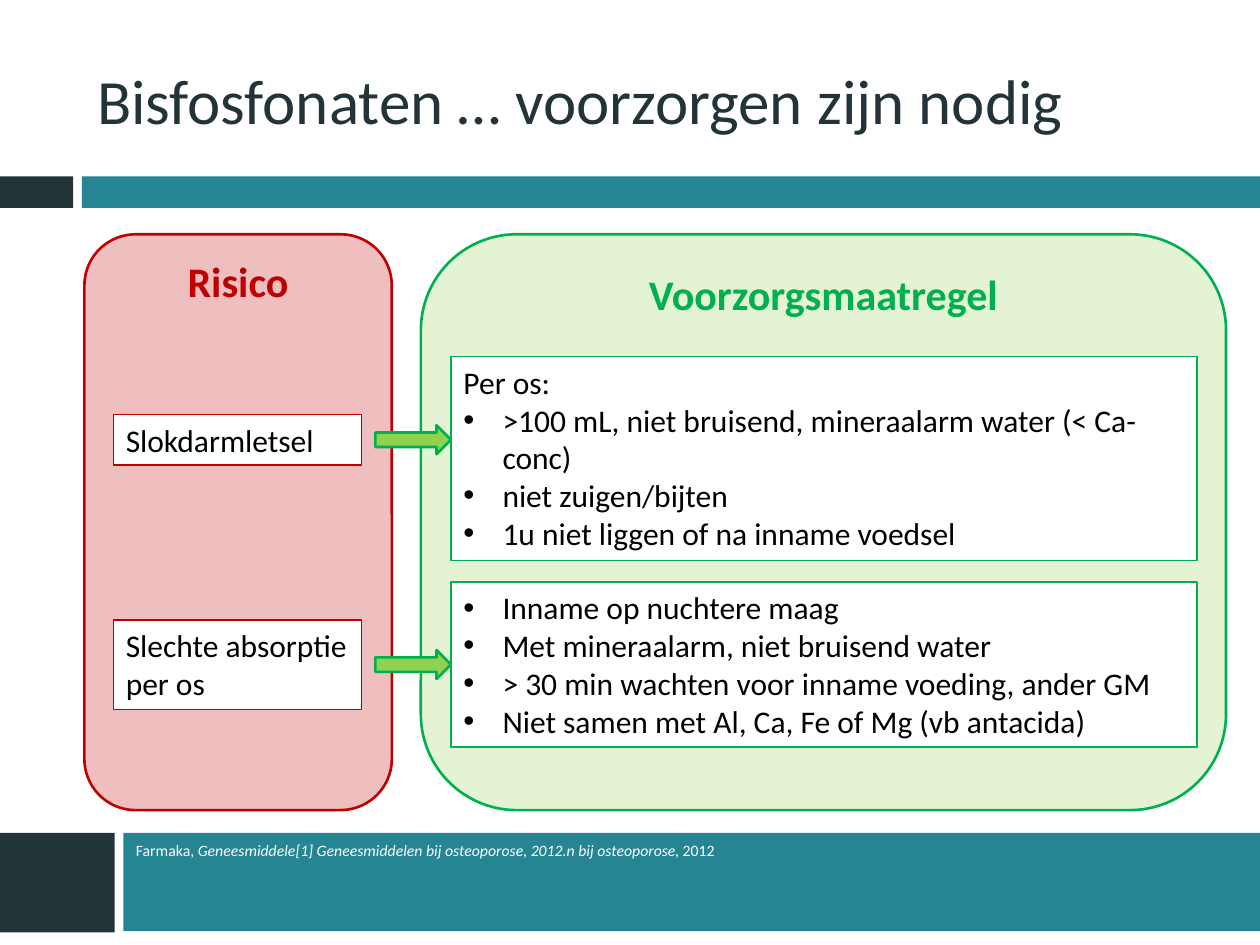
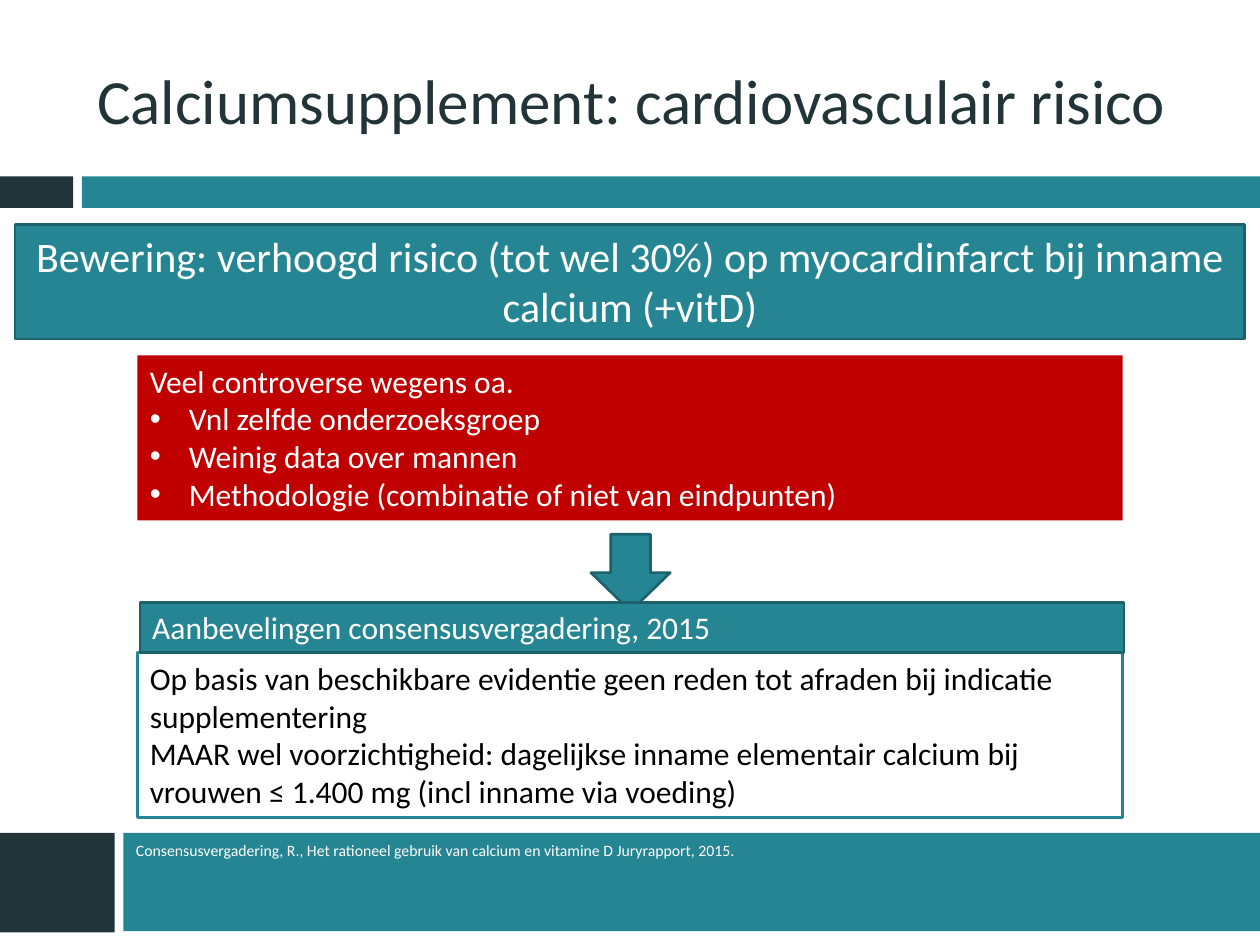
from lxml.etree import SubElement
from pptx import Presentation
from pptx.dml.color import RGBColor
from pptx.enum.shapes import MSO_SHAPE
from pptx.enum.text import MSO_ANCHOR, PP_ALIGN
from pptx.oxml.ns import qn
from pptx.util import Inches, Pt

FONT = "Calibri"
DARK = RGBColor(0x23, 0x34, 0x38)
TEAL = RGBColor(0x26, 0x85, 0x93)
TEAL_EDGE = RGBColor(0x1C, 0x62, 0x6D)
RED = RGBColor(0xC0, 0x00, 0x00)
GREEN = RGBColor(0x00, 0xB0, 0x50)
LIME = RGBColor(0x92, 0xD0, 0x50)
WHITE = RGBColor(0xFF, 0xFF, 0xFF)
BLACK = RGBColor(0x00, 0x00, 0x00)

# Content: a line that starts with BULLET becomes a bullet paragraph
BULLET = "• "

PRECAUTIONS_TITLE = "Bisfosfonaten … voorzorgen zijn nodig"
PRECAUTIONS_SOURCE = [  # (text, italic)
    ("Farmaka, ", False),
    ("Geneesmiddele[1] Geneesmiddelen bij osteoporose, 2012.n bij osteoporose", True),
    (", 2012", False),
]
PANELS = [  # heading, left, width, fill, edge
    ("Risico", 0.67, 2.44, RED, RED),
    ("Voorzorgsmaatregel", 3.34, 6.39, LIME, GREEN),
]
RISKS = [  # risk, top, height, measures, top, height
    ("Slokdarmletsel", 3.29, 0.4,
     ["Per os:",
      "• >100 mL, niet bruisend, mineraalarm water (< Ca-conc)",
      "• niet zuigen/bijten",
      "• 1u niet liggen of na inname voedsel"], 2.83, 1.62),
    ("Slechte absorptie per os", 4.92, 0.71,
     ["• Inname op nuchtere maag",
      "• Met mineraalarm, niet bruisend water",
      "• > 30 min wachten voor inname voeding, ander GM",
      "• Niet samen met Al, Ca, Fe of Mg (vb antacida)"], 4.62, 1.31),
]

CALCIUM_TITLE = "Calciumsupplement: cardiovasculair risico"
CALCIUM_SOURCE = [
    ("Consensusvergadering, R., Het rationeel gebruik van calcium en vitamine D "
     "Juryrapport, 2015.", False),
]
CLAIM = ["Bewering: verhoogd risico (tot wel 30%) op myocardinfarct bij inname calcium (+vitD)"]
CONTROVERSY = [
    "Veel controverse wegens oa.",
    "• Vnl zelfde onderzoeksgroep",
    "• Weinig data over mannen",
    "• Methodologie (combinatie of niet van eindpunten)",
]
ADVICE_HEADING = ["Aanbevelingen consensusvergadering, 2015"]
ADVICE = [
    "Op basis van beschikbare evidentie geen reden tot afraden bij indicatie supplementering",
    "MAAR wel voorzichtigheid: dagelijkse inname elementair calcium bij vrouwen "
    "≤ 1.400 mg (incl inname via voeding)",
]

# Shared bands: left, top, width, height, fill
BANDS = [
    (0, 1.4, 0.58, 0.25, DARK),
    (0.65, 1.4, 9.35, 0.25, TEAL),
    (-0.01, 6.61, 0.92, 0.79, DARK),
    (0.98, 6.61, 9.02, 0.78, TEAL),
]


def style_run(run, size, color, bold=False, italic=False):
    font = run.font
    font.name, font.size, font.bold, font.italic = FONT, Pt(size), bold, italic
    font.color.rgb = color


def make_bullet(paragraph):
    properties = paragraph._p.get_or_add_pPr()
    properties.set("marL", str(Inches(0.31)))
    properties.set("indent", str(-Inches(0.31)))
    SubElement(properties, qn("a:buFont")).set("typeface", "Arial")
    SubElement(properties, qn("a:buChar")).set("char", BULLET.strip())


def add_box(slide, place, fill, edge=None, edge_width=1.5, kind=MSO_SHAPE.RECTANGLE,
            lines=(), size=18, color=BLACK, bold=False, align=PP_ALIGN.LEFT):
    box = slide.shapes.add_shape(kind, *map(Inches, place))
    box.shadow.inherit = False
    box.fill.solid()
    box.fill.fore_color.rgb = fill
    if edge is None:
        box.line.fill.background()
    else:
        box.line.color.rgb = edge
        box.line.width = Pt(edge_width)
    frame = box.text_frame
    frame.word_wrap = True
    frame.vertical_anchor = MSO_ANCHOR.TOP
    for number, line in enumerate(lines):
        paragraph = frame.add_paragraph() if number else frame.paragraphs[0]
        paragraph.text = line.removeprefix(BULLET)
        paragraph.alignment = align
        if line.startswith(BULLET):
            make_bullet(paragraph)
        style_run(paragraph.runs[0], size, color, bold)
    return box


def make_see_through(box, percent):
    color = box.fill._xPr.find(qn("a:solidFill"))[0]
    SubElement(color, qn("a:alpha")).set("val", str(percent * 1000))


def add_base_slide(deck, heading, source):
    """Title, bands and source line that every slide has."""
    slide = deck.slides.add_slide(deck.slide_layouts[5])
    for *place, fill in BANDS:
        add_box(slide, place, fill)

    title = slide.shapes.title
    title.left, title.top, title.width, title.height = map(Inches, (0.67, 0.25, 8.92, 1.08))
    title.text_frame.text = heading
    title.text_frame.vertical_anchor = MSO_ANCHOR.MIDDLE
    title_line = title.text_frame.paragraphs[0]
    title_line.alignment = PP_ALIGN.LEFT
    style_run(title_line.runs[0], 36, DARK)

    footer = slide.shapes.add_textbox(*map(Inches, (0.98, 6.62, 8.52, 0.77)))
    footer.text_frame.word_wrap = True
    for text, italic in source:
        run = footer.text_frame.paragraphs[0].add_run()
        run.text = text
        style_run(run, 9, WHITE, italic=italic)
    return slide


def build_precautions(deck):
    slide = add_base_slide(deck, PRECAUTIONS_TITLE, PRECAUTIONS_SOURCE)

    # Two tinted panels
    for heading, left, width, fill, edge in PANELS:
        panel = add_box(slide, (left, 1.86, width, 4.57), fill, edge,
                        kind=MSO_SHAPE.ROUNDED_RECTANGLE, lines=[heading], size=24,
                        color=edge, bold=True, align=PP_ALIGN.CENTER)
        make_see_through(panel, 25)

    # Each risk points to its measures
    arrow_height = 0.23
    for risk, risk_top, risk_height, measures, top, height in RISKS:
        add_box(slide, (0.9, risk_top, 1.97, risk_height), WHITE, RED, 0.75, lines=[risk])
        add_box(slide, (3.58, top, 5.92, height), WHITE, GREEN, 0.75, lines=measures)
        arrow_top = risk_top + (risk_height - arrow_height) / 2
        add_box(slide, (2.98, arrow_top, 0.6, arrow_height), LIME, GREEN,
                kind=MSO_SHAPE.RIGHT_ARROW)


def build_calcium(deck):
    slide = add_base_slide(deck, CALCIUM_TITLE, CALCIUM_SOURCE)

    # Claim and controversy
    add_box(slide, (0.12, 1.78, 9.76, 0.91), TEAL, TEAL_EDGE, lines=CLAIM,
            size=24, color=WHITE, align=PP_ALIGN.CENTER)
    add_box(slide, (1.09, 2.82, 7.82, 1.31), RED, lines=CONTROVERSY, color=WHITE)

    # Arrow down to the advice
    add_box(slide, (4.69, 4.24, 0.63, 0.61), TEAL, TEAL_EDGE, kind=MSO_SHAPE.DOWN_ARROW)
    add_box(slide, (1.09, 5.18, 7.82, 1.31), WHITE, TEAL, lines=ADVICE)
    add_box(slide, (1.11, 4.78, 7.81, 0.4), TEAL, TEAL_EDGE, lines=ADVICE_HEADING, color=WHITE)


def main():
    deck = Presentation()
    deck.slide_width, deck.slide_height = Inches(10), Inches(7.5)
    build_precautions(deck)
    build_calcium(deck)
    deck.save("out.pptx")


if __name__ == "__main__":
    main()
